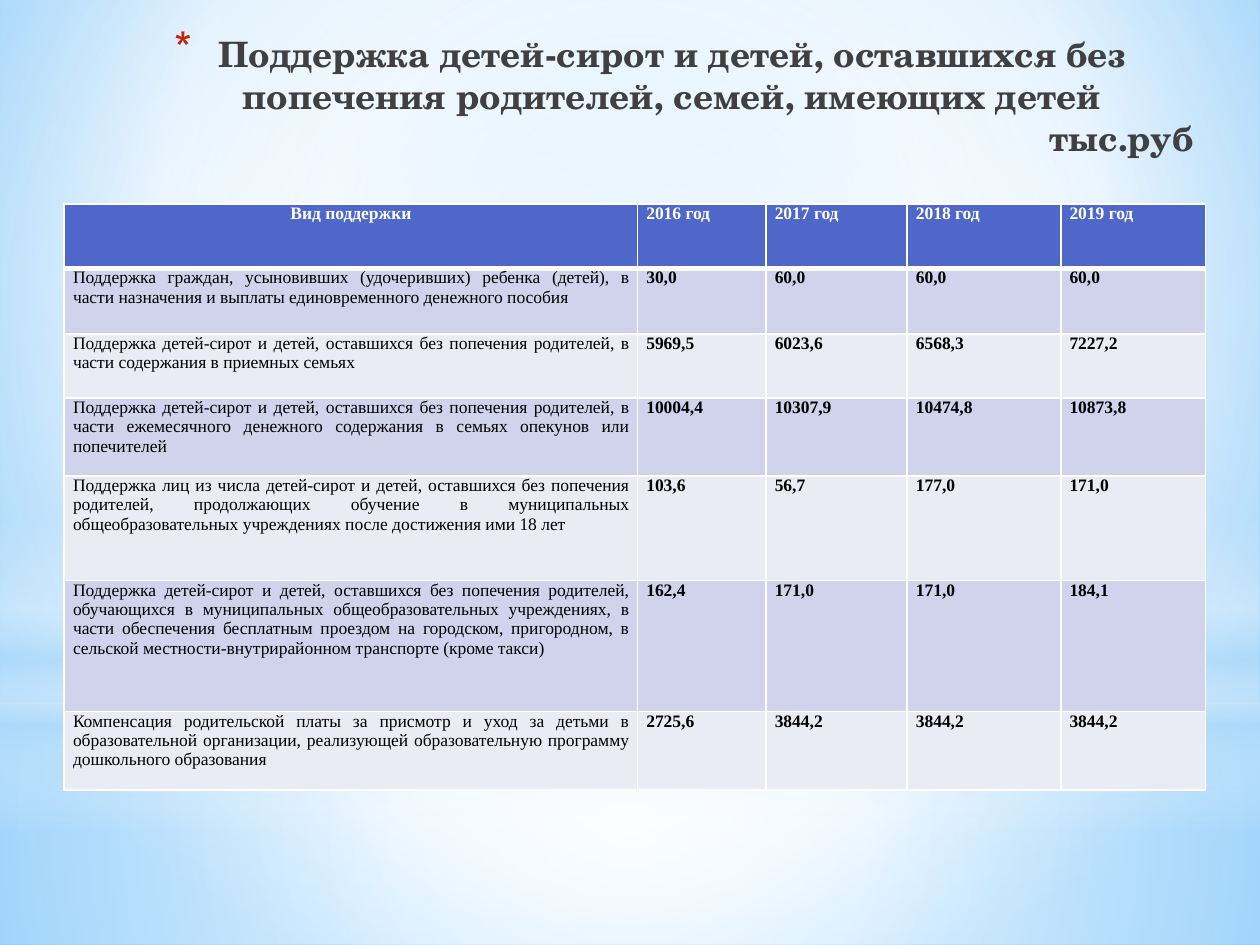
"""Builds the slide on support for orphans and families with children."""
from dataclasses import dataclass
from typing import NamedTuple

from lxml import etree
from pptx import Presentation
from pptx.dml.color import RGBColor
from pptx.enum.shapes import MSO_SHAPE
from pptx.enum.text import PP_ALIGN
from pptx.oxml.ns import qn
from pptx.util import Inches, Pt

RECT, OVAL = MSO_SHAPE.RECTANGLE, MSO_SHAPE.OVAL
CENTER, RIGHT, JUSTIFY = PP_ALIGN.CENTER, PP_ALIGN.RIGHT, PP_ALIGN.JUSTIFY
GRID_COLUMNS, GRID_ROWS = 100, 75
CELL = Inches(0.1)


@dataclass(frozen=True)
class Theme:
    white: str = "FFFFFF"
    haze: str = "B4DCFA"
    sky: str = "9ED5FF"
    deep_sky: str = "5BB9FF"
    title: str = "404040"
    asterisk: str = "C3260C"
    header: str = "4E67C8"
    odd_row: str = "D0D3EB"
    even_row: str = "E9EBF5"
    ink: str = "000000"
    title_font: str = "TeX Gyre Schola"
    table_font: str = "Times New Roman"
    title_size: int = 20
    table_size: int = 10
    thin: int = 1
    thick: int = 3


class Box(NamedTuple):
    left: float
    top: float
    width: float
    height: float


class Stop(NamedTuple):
    place: int
    color: str
    opacity: int = 100


class Glow(NamedTuple):
    form: int
    box: Box
    stops: list[Stop]
    center: tuple[int, ...] | None = (50, 50, 50, 50)


class Support(NamedTuple):
    kind: str
    sums: list[str]
    height: float


THEME = Theme()
TITLE_BOX = Box(7.5, 2.1, 88.2, 11.8)
TABLE_BOX = Box(5.1, 16.2, 90.6, 46.5)
COLUMN_WIDTHS = [45.5, 10.2, 11.2, 12.2, 11.5]
BACKDROP = [Stop(0, THEME.sky), Stop(60, THEME.white), Stop(100, THEME.deep_sky)]
GLOWS = [
    Glow(RECT, Box(0, 55.8, 100, 19.2),
         [Stop(0, THEME.white, 91), Stop(37, THEME.white, 76), Stop(100, THEME.haze, 79)]),
    Glow(RECT, Box(0, 0, 100, 55.8),
         [Stop(0, THEME.white, 89), Stop(48, THEME.white, 62), Stop(100, THEME.haze, 79)]),
    Glow(RECT, Box(0, 41.2, 100, 25),
         [Stop(0, THEME.white, 0), Stop(29, THEME.white, 30), Stop(45, THEME.haze, 40),
          Stop(55, THEME.white, 26), Stop(65, THEME.haze, 60), Stop(100, THEME.white, 0)], None),
    Glow(OVAL, Box(0, 17.5, 100, 55.8), [Stop(0, THEME.white), Stop(56, THEME.white, 0)]),
]
SUPPORTS = [
    Support("Вид поддержки", [f"{year} год" for year in range(2016, 2020)], 5.1),
    Support("Поддержка граждан, усыновивших (удочеривших) ребенка (детей), в части "
            "назначения и выплаты единовременного денежного пособия",
            ["30,0", "60,0", "60,0", "60,0"], 5.2),
    Support("Поддержка детей-сирот и детей, оставшихся без попечения родителей, в части "
            "содержания в приемных семьях",
            ["5969,5", "6023,6", "6568,3", "7227,2"], 5.1),
    Support("Поддержка детей-сирот и детей, оставшихся без попечения родителей, в части "
            "ежемесячного денежного содержания в семьях опекунов или попечителей",
            ["10004,4", "10307,9", "10474,8", "10873,8"], 6.2),
    Support("Поддержка лиц из числа детей-сирот и детей, оставшихся без попечения родителей, "
            "продолжающих обучение в муниципальных общеобразовательных учреждениях после "
            "достижения ими 18 лет",
            ["103,6", "56,7", "177,0", "171,0"], 8.3),
    Support("Поддержка детей-сирот и детей, оставшихся без попечения родителей, обучающихся "
            "в муниципальных общеобразовательных учреждениях, в части обеспечения бесплатным "
            "проездом на городском, пригородном, в сельской местности-внутрирайонном "
            "транспорте (кроме такси)",
            ["162,4", "171,0", "171,0", "184,1"], 10.4),
    Support("Компенсация родительской платы за присмотр и уход за детьми в образовательной "
            "организации, реализующей образовательную программу дошкольного образования",
            ["2725,6", "3844,2", "3844,2", "3844,2"], 6.2),
]


def span(cells: float) -> int:
    return round(cells * CELL)


def place(box: Box) -> list[int]:
    return [span(length) for length in box]


def add_node(parent, tag: str, **attributes):
    values = {name: str(value) for name, value in attributes.items()}
    return etree.SubElement(parent, qn(f"a:{tag}"), values)


def paint_gradient(fill, owner, stops: list[Stop], center: tuple[int, ...] | None) -> None:
    fill.gradient()
    gradient = owner.find(f".//{qn('a:gradFill')}")
    for child in list(gradient):
        gradient.remove(child)
    stop_list = add_node(gradient, "gsLst")
    for stop in stops:
        color = add_node(add_node(stop_list, "gs", pos=stop.place * 1000), "srgbClr", val=stop.color)
        if stop.opacity < 100:
            add_node(color, "alpha", val=stop.opacity * 1000)
    if center is None:
        add_node(gradient, "lin", ang=90 * 60000, scaled=1)
    else:
        edges = {side: share * 1000 for side, share in zip("ltrb", center)}
        add_node(add_node(gradient, "path", path="circle"), "fillToRect", **edges)


def draw_glow(slide, glow: Glow) -> None:
    shape = slide.shapes.add_shape(glow.form, *place(glow.box))
    shape.shadow.inherit = False
    shape.line.fill.background()
    paint_gradient(shape.fill, shape._element.spPr, glow.stops, glow.center)


def write(paragraph, text: str, *, font: str, size: int, color: str,
          bold: bool = True, align: int = JUSTIFY) -> None:
    paragraph.alignment = align
    run = paragraph.add_run()
    run.text = text
    run.font.name, run.font.size, run.font.bold = font, Pt(size), bold
    run.font.color.rgb = RGBColor.from_string(color)


def draw_title(slide) -> None:
    frame = slide.shapes.add_textbox(*place(TITLE_BOX)).text_frame
    frame.word_wrap = True
    style = {"font": THEME.title_font, "size": THEME.title_size, "color": THEME.title}
    heading, unit = frame.paragraphs[0], frame.add_paragraph()
    write(heading, "Поддержка детей-сирот и детей, оставшихся без попечения родителей, "
          "семей, имеющих детей", align=CENTER, **style)
    write(unit, "тыс.руб", align=RIGHT, **style)
    properties = heading._p.get_or_add_pPr()
    properties.set("marL", str(span(3.5)))
    properties.set("indent", str(-span(3.5)))
    add_node(add_node(properties, "buClr"), "srgbClr", val=THEME.asterisk)
    add_node(properties, "buSzPct", val=128000)
    add_node(properties, "buChar", char="*")


def draw_borders(cell, **widths: int) -> None:
    properties = cell._tc.get_or_add_tcPr()
    for index, (side, width) in enumerate(widths.items()):
        line = add_node(properties, f"ln{side}", w=Pt(width))
        add_node(add_node(line, "solidFill"), "srgbClr", val=THEME.white)
        properties.insert(index, line)


def draw_table(slide) -> None:
    table = slide.shapes.add_table(len(SUPPORTS), len(COLUMN_WIDTHS), *place(TABLE_BOX)).table
    for column, width in zip(table.columns, COLUMN_WIDTHS):
        column.width = span(width)
    for r, support in enumerate(SUPPORTS):
        table.rows[r].height = span(support.height)
        is_header = r == 0
        row_fill = THEME.header if is_header else (THEME.even_row, THEME.odd_row)[r % 2]
        for c, text in enumerate([support.kind, *support.sums]):
            cell = table.cell(r, c)
            cell.margin_left = cell.margin_right = Inches(0.07)
            cell.margin_top = cell.margin_bottom = 0
            cell.fill.solid()
            cell.fill.fore_color.rgb = RGBColor.from_string(row_fill)
            draw_borders(cell, L=THEME.thin, R=THEME.thin,
                         T=THEME.thick if r == 1 else THEME.thin,
                         B=THEME.thick if is_header else THEME.thin)
            write(cell.text_frame.paragraphs[0], text, font=THEME.table_font,
                  size=THEME.table_size, color=THEME.white if is_header else THEME.ink,
                  bold=is_header or c > 0, align=CENTER if is_header and c == 0 else JUSTIFY)


def main() -> None:
    deck = Presentation()
    deck.slide_width, deck.slide_height = span(GRID_COLUMNS), span(GRID_ROWS)
    slide = deck.slides.add_slide(deck.slide_layouts[6])
    paint_gradient(slide.background.fill, slide._element, BACKDROP, (20, 10, 20, 60))
    for glow in GLOWS:
        draw_glow(slide, glow)
    draw_title(slide)
    draw_table(slide)
    deck.save("out.pptx")


if __name__ == "__main__":
    main()
